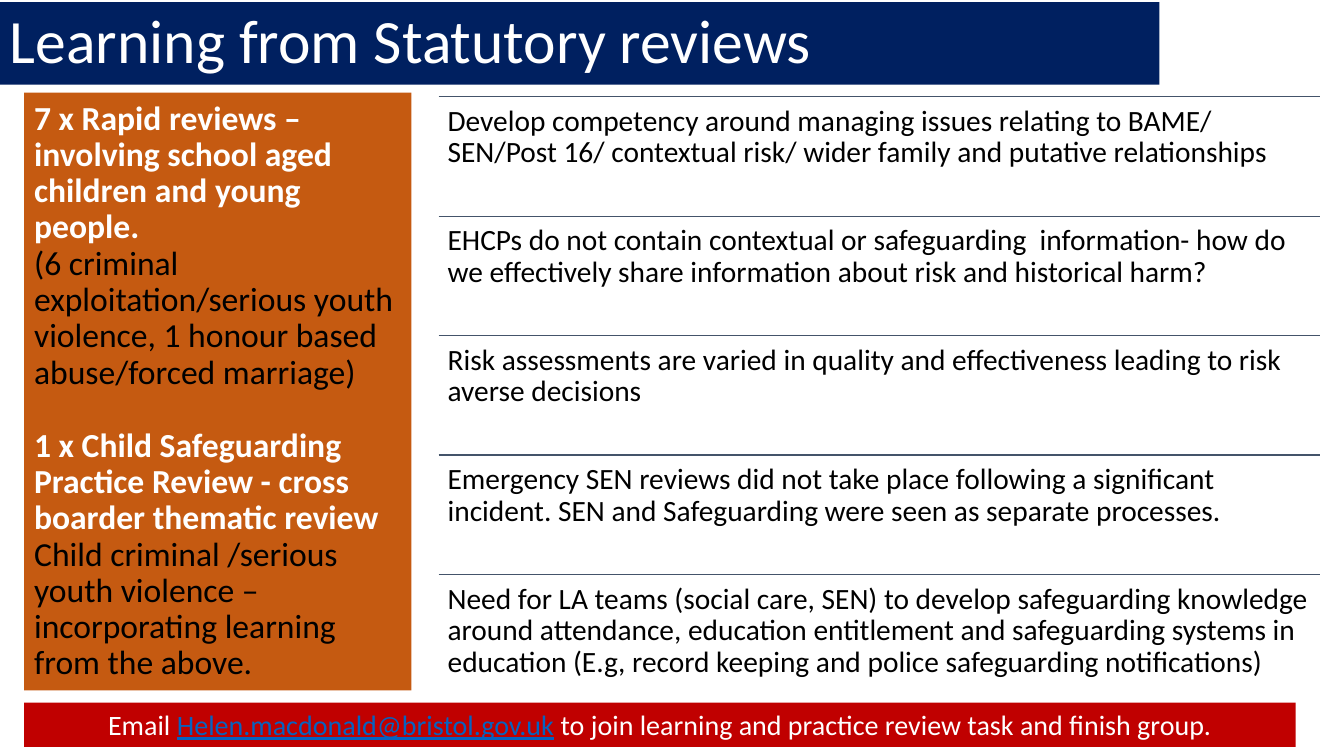
from dataclasses import dataclass

from pptx import Presentation
from pptx.dml.color import RGBColor
from pptx.enum.shapes import MSO_CONNECTOR, MSO_SHAPE
from pptx.enum.text import MSO_ANCHOR, PP_ALIGN
from pptx.oxml.ns import qn
from pptx.util import Inches, Pt
from lxml.etree import SubElement


@dataclass(frozen=True)
class Theme:
    font: str = "Calibri"
    white: str = "FFFFFF"
    black: str = "000000"
    navy: str = "002060"
    orange: str = "C55A11"
    red: str = "C00000"
    slate: str = "44546A"
    link: str = "0563C1"
    head: int = 44
    side: int = 24
    point: int = 21
    foot: int = 20


THEME = Theme()

REVIEWS = [
    ("7 x Rapid reviews – involving school aged children and young people.",
     "(6 criminal exploitation/serious youth violence, "
     "1 honour based abuse/forced marriage)"),
    ("1 x Child Safeguarding Practice Review - cross boarder thematic review",
     "Child criminal /serious youth violence – "
     "incorporating learning from the above."),
]

POINTS = [
    "Develop competency around managing issues relating to BAME/ SEN/Post 16/ "
    "contextual risk/ wider family and putative relationships",
    "EHCPs do not contain contextual or safeguarding  information- how do we "
    "effectively share information about risk and historical harm?",
    "Risk assessments are varied in quality and effectiveness leading to risk "
    "averse decisions",
    "Emergency SEN reviews did not take place following a significant incident. "
    "SEN and Safeguarding were seen as separate processes.",
    "Need for LA teams (social care, SEN) to develop safeguarding knowledge around "
    "attendance, education entitlement and safeguarding systems in education "
    "(E.g, record keeping and police safeguarding notifications)",
]


def apply(target, values):
    """Set each named format value on the target."""
    for name, value in values.items():
        setattr(target, name, value)


def add_run(para, text, size, color, **style):
    run = para.add_run()
    run.text = text
    apply(run.font, {"name": THEME.font, "size": Pt(size), **style})
    run.font.color.rgb = RGBColor.from_string(color)


def add_para(frame, first=False, **style):
    para = frame.paragraphs[0] if first else frame.add_paragraph()
    apply(para, {"alignment": PP_ALIGN.LEFT, "line_spacing": 0.9, **style})
    return para


def add_panel(slide, box, color):
    """Add a filled box and return its text frame."""
    panel = slide.shapes.add_shape(MSO_SHAPE.RECTANGLE, *map(Inches, box))
    panel.shadow.inherit = False
    panel.fill.solid()
    panel.fill.fore_color.rgb = RGBColor.from_string(color)
    panel.line.fill.background()
    apply(panel.text_frame,
          {"word_wrap": True, "vertical_anchor": MSO_ANCHOR.MIDDLE})
    return panel.text_frame


def add_rule(slide, left, top, width):
    ends = map(Inches, (left, top, left + width, top))
    rule = slide.shapes.add_connector(MSO_CONNECTOR.STRAIGHT, *ends)
    rule.line.color.rgb = RGBColor.from_string(THEME.slate)
    rule.line.width = Pt(1)
    SubElement(rule._element.spPr, qn("a:effectLst"))


def add_point(slide, text, left, top, width, height):
    """Add one learning point under its rule."""
    add_rule(slide, left, top, width)
    box = slide.shapes.add_textbox(*map(Inches, (left, top, width, height)))
    frame = box.text_frame
    sides = ("left", "top", "right", "bottom")
    apply(frame, {f"margin_{side}": Inches(0.09) for side in sides})
    frame.word_wrap = True
    add_run(add_para(frame, first=True), text, THEME.point, THEME.black)


def main():
    deck = Presentation()
    apply(deck, {"slide_width": Inches(13.33), "slide_height": Inches(7.5)})
    slide = deck.slides.add_slide(deck.slide_layouts[6])

    # Review counts on the left
    frame = add_panel(slide, (0.24, 0.92, 3.84, 5.93), THEME.orange)
    for row, (title, detail) in enumerate(REVIEWS):
        gap = Pt(26.4 if row else 0)
        para = add_para(frame, first=row == 0, space_before=gap)
        add_run(para, title, THEME.side, THEME.white, bold=True)
        add_run(add_para(frame), detail, THEME.side, THEME.black)

    # Learning points on the right
    step = 1.185
    for row, text in enumerate(POINTS):
        add_point(slide, text, 4.35, 0.96 + row * step, 8.74, step)

    # Heading bar
    frame = add_panel(slide, (0, 0.02, 11.5, 0.82), THEME.navy)
    add_run(add_para(frame, first=True), "Learning from Statutory reviews",
            THEME.head, THEME.white)

    # Contact bar
    frame = add_panel(slide, (0.24, 6.97, 12.61, 0.44), THEME.red)
    para = add_para(frame, first=True, alignment=PP_ALIGN.CENTER, line_spacing=1.0)
    add_run(para, "Email ", THEME.foot, THEME.white)
    add_run(para, "Helen.macdonald@bristol.gov.uk", THEME.foot, THEME.link,
            underline=True)
    add_run(para, " to join learning and practice review task and finish group.",
            THEME.foot, THEME.white)

    deck.save("out.pptx")


if __name__ == "__main__":
    main()
